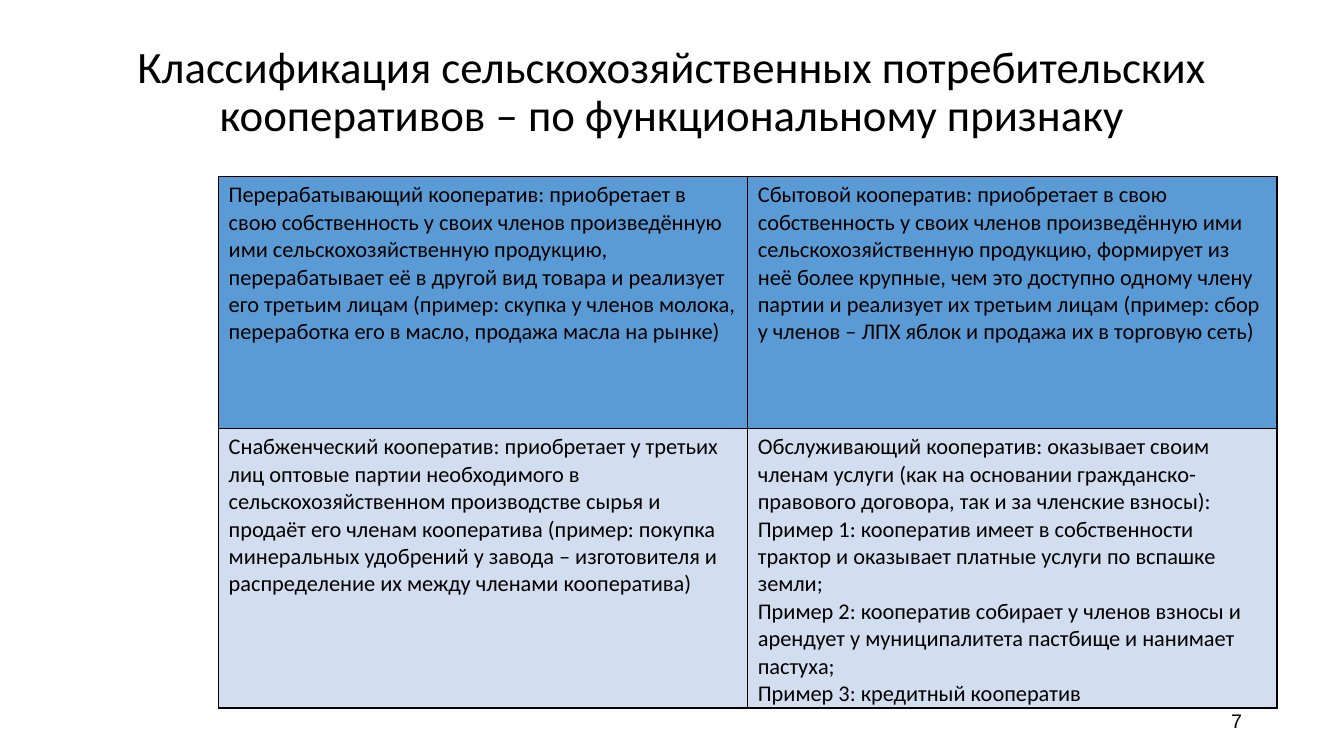
from lxml import etree
from pptx import Presentation
from pptx import util as u
from pptx.dml.color import RGBColor
from pptx.enum import text
from pptx.oxml.ns import qn

COLORS = {"text": "000000", "border": "000000", "top": "5B9BD5", "bottom": "D2DEEF"}

CELLS = [
    ("top", [
        ["Перерабатывающий кооператив: приобретает в свою собственность у своих членов произведённую ими сельскохозяйственную продукцию, перерабатывает её в другой вид товара и реализует его третьим лицам (пример: скупка у членов молока, переработка его в масло, продажа масла на рынке)"],
        ["Сбытовой кооператив: приобретает в свою собственность у своих членов произведённую ими сельскохозяйственную продукцию, формирует из неё более крупные, чем это доступно одному члену партии и реализует их третьим лицам (пример: сбор у членов – ЛПХ яблок и продажа их в торговую сеть)"],
    ]),
    ("bottom", [
        ["Снабженческий кооператив: приобретает у третьих лиц оптовые партии необходимого в сельскохозяйственном производстве сырья и продаёт его членам кооператива (пример: покупка минеральных удобрений у завода – изготовителя и распределение их между членами кооператива)"],
        ["Обслуживающий кооператив: оказывает своим членам услуги (как на основании гражданско-правового договора, так и за членские взносы):",
         "Пример 1: кооператив имеет в собственности трактор и оказывает платные услуги по вспашке земли;",
         "Пример 2: кооператив собирает у членов взносы и арендует у муниципалитета пастбище и нанимает пастуха;",
         "Пример 3: кредитный кооператив"],
    ]),
]


def write(tf, lines, font, para):
    for i, line in enumerate(lines):
        p = tf.paragraphs[0] if i == 0 else tf.add_paragraph()
        for name, value in para.items():
            setattr(p, name, value)
        r = p.add_run()
        r.text = line
        for name, value in font.items():
            setattr(r.font, name, value)
        r.font.color.rgb = RGBColor.from_string(COLORS["text"])


def add_borders(cell):
    tcPr = cell._tc.get_or_add_tcPr()
    for i, side in enumerate(("lnL", "lnR", "lnT", "lnB")):
        ln = etree.Element(qn(f"a:{side}"), w=str(u.Pt(1)))
        fill = etree.SubElement(ln, qn("a:solidFill"))
        etree.SubElement(fill, qn("a:srgbClr"), val=COLORS["border"])
        tcPr.insert(i, ln)


prs = Presentation()
prs.slide_width, prs.slide_height = u.Cm(33.87), u.Cm(19.05)
s = prs.slides.add_slide(prs.slide_layouts[6])

LABELS = [
    ((1.7, 0.76, 30.48, 3.18),
     "Классификация сельскохозяйственных потребительских кооперативов – по функциональному признаку",
     {"name": "Calibri", "size": u.Pt(32)},
     {"alignment": text.PP_ALIGN.CENTER, "line_spacing": 0.9}),
    ((23.93, 17.65, 7.62, 1.02), "7",
     {"name": "Arial", "size": u.Pt(14)},
     {"alignment": text.PP_ALIGN.RIGHT}),
]
for box, label, font, para in LABELS:
    tf = s.shapes.add_textbox(*map(u.Cm, box)).text_frame
    tf.word_wrap = True
    tf.vertical_anchor = text.MSO_ANCHOR.MIDDLE
    write(tf, [label], font, para)

table = s.shapes.add_table(2, 2, u.Cm(5.51), u.Cm(4.45), u.Cm(26.67), u.Cm(13.39)).table
for row, height in zip(table.rows, (6.35, 7.04)):
    row.height = u.Cm(height)

for row, (color, contents) in zip(table.rows, CELLS):
    for cell, lines in zip(row.cells, contents):
        cell.fill.solid()
        cell.fill.fore_color.rgb = RGBColor.from_string(COLORS[color])
        add_borders(cell)
        write(cell.text_frame, lines,
              {"name": "Calibri", "size": u.Pt(16), "bold": False}, {})

prs.save("out.pptx")
